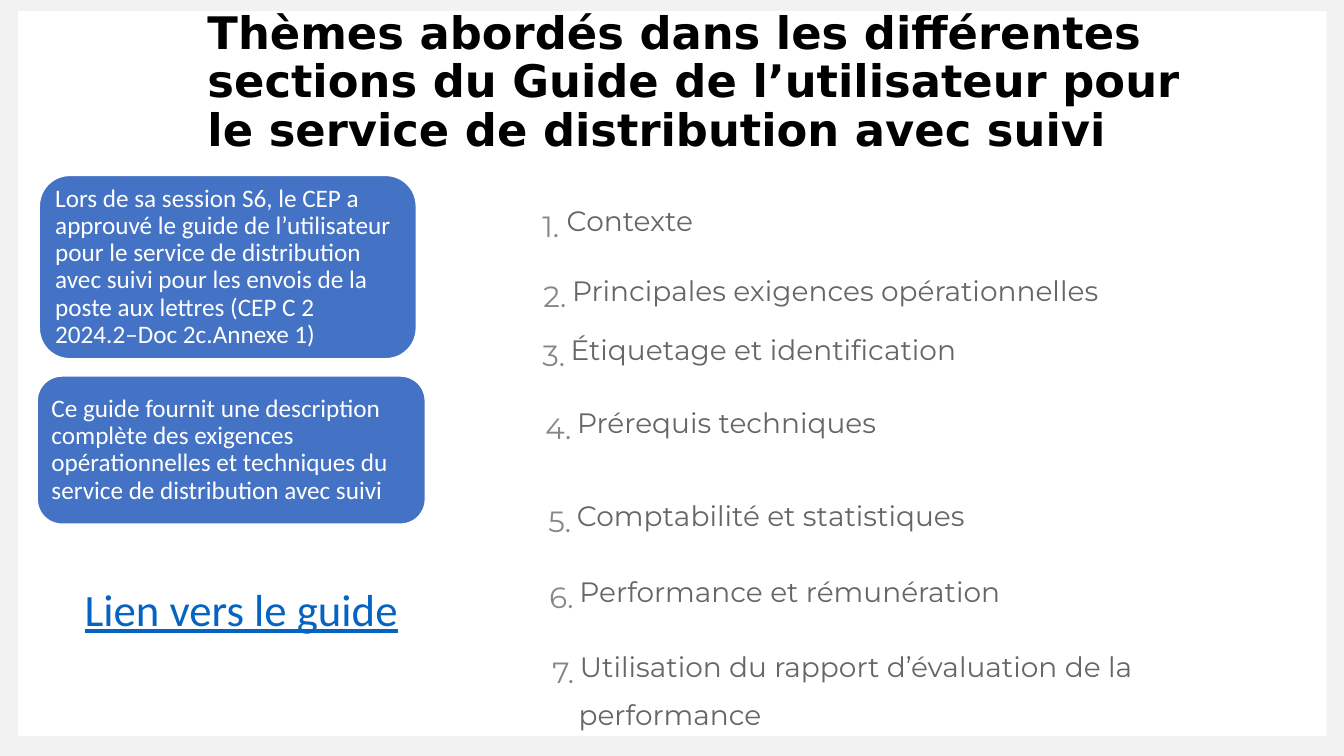
from dataclasses import dataclass

from pptx import Presentation
from pptx.dml.color import RGBColor as Color
from pptx.enum.shapes import MSO_SHAPE as Shape
from pptx.enum.text import MSO_ANCHOR as Anchor, MSO_AUTO_SIZE as AutoSize, PP_ALIGN as Align
from pptx.util import Pt


@dataclass(frozen=True)
class Theme:
    frame: str = "F2F2F2"
    white: str = "FFFFFF"
    black: str = "000000"
    card: str = "4472C4"
    link: str = "0563C1"
    number: str = "878787"
    topic: str = "666666"
    title_font: str = "DejaVu Sans"
    body_font: str = "Calibri"
    list_font: str = "Montserrat"
    title_size: int = 32
    link_size: int = 32
    card_size: int = 18
    number_size: int = 36
    gap_size: int = 27
    topic_size: int = 20


class SlideBuilder:
    def __init__(self, slide, theme):
        self.slide = slide
        self.theme = theme

    def run(self, paragraph, text, font, size, color, bold=False, underline=False, baseline=0):
        run = paragraph.add_run()
        run.text = text
        run.font.name = font
        run.font.size = Pt(size)
        run.font.bold = bold
        run.font.underline = underline
        run.font.color.rgb = Color.from_string(color)
        if baseline:
            run.font._element.set("baseline", str(baseline * 1000))

    def box(self, kind, bounds, fill, line=None):
        shape = self.slide.shapes.add_shape(kind, *map(Pt, bounds))
        shape.shadow.inherit = False
        shape.fill.solid()
        shape.fill.fore_color.rgb = Color.from_string(fill)
        if line:
            shape.line.color.rgb = Color.from_string(line)
            shape.line.width = Pt(1)
        else:
            shape.line.fill.background()
        return shape

    def frame(self, shape, insets, anchor=Anchor.TOP):
        frame = shape.text_frame
        frame.word_wrap = True
        frame.vertical_anchor = anchor
        (frame.margin_left, frame.margin_top,
         frame.margin_right, frame.margin_bottom) = map(Pt, insets)
        return frame

    def text_box(self, bounds, insets=(7.2, 3.6, 7.2, 3.6), anchor=Anchor.TOP):
        shape = self.slide.shapes.add_textbox(*map(Pt, bounds))
        return self.frame(shape, insets, anchor)

    def title(self, bounds, lines):
        theme = self.theme
        paragraph = self.text_box(bounds, anchor=Anchor.MIDDLE).paragraphs[0]
        paragraph.line_spacing = 0.9
        for index, line in enumerate(lines):
            if index:
                paragraph.add_line_break()
            self.run(paragraph, line, theme.title_font, theme.title_size, theme.black, bold=True)

    def card(self, bounds, text):
        theme = self.theme
        shape = self.box(Shape.ROUNDED_RECTANGLE, bounds, theme.card, theme.white)
        paragraph = self.frame(shape, (5, 5, 5, 5), Anchor.MIDDLE).paragraphs[0]
        paragraph.alignment = Align.LEFT
        paragraph.line_spacing = 0.9
        self.run(paragraph, text, theme.body_font, theme.card_size, theme.white)

    def topic(self, number, text, bounds, margin, hanging):
        theme = self.theme
        frame = self.text_box(bounds, (0, 2 if hanging else 1, 0, 0))
        frame.auto_size = AutoSize.SHAPE_TO_FIT_TEXT
        paragraph = frame.paragraphs[0]
        properties = paragraph._p.get_or_add_pPr()
        properties.set("marL", str(Pt(margin)))
        properties.set("indent", str(-Pt(hanging)))
        if hanging:
            paragraph.line_spacing = 1.25
        gap_size = theme.number_size if number == 1 else theme.gap_size
        for part, size in ((f"{number}.", theme.number_size), (" ", gap_size)):
            self.run(paragraph, part, theme.list_font, size, theme.number, baseline=-12)
        self.run(paragraph, text, theme.list_font, theme.topic_size, theme.topic)

    def link_label(self, bounds, text):
        theme = self.theme
        frame = self.text_box(bounds)
        frame.auto_size = AutoSize.SHAPE_TO_FIT_TEXT
        paragraph = frame.paragraphs[0]
        paragraph.alignment = Align.CENTER
        self.run(paragraph, text, theme.body_font, theme.link_size, theme.link, underline=True)


CARDS = [
    ((28.1, 125.3, 269.3, 131),
     "Lors de sa session S6, le CEP a approuvé le guide de l’utilisateur pour le service de "
     "distribution avec suivi pour les envois de la poste aux lettres "
     "(CEP C 2 2024.2–Doc 2c.Annexe 1)"),
    ((26.6, 268.6, 277.2, 105.8),
     "Ce guide fournit une description complète des exigences opérationnelles et techniques "
     "du service de distribution avec suivi"),
]

# Text, bounds, left margin, hanging indent
TOPICS = [
    ("Contexte", (384.5, 115.9, 172.8, 35.3), 18.7, 15.8),
    ("Principales exigences opérationnelles", (385.2, 166.3, 474.5, 35.3), 22.3, 19.4),
    ("Étiquetage et identification", (384.5, 220.3, 443.5, 30.2), 2.9, 0),
    ("Prérequis techniques", (386.6, 272.9, 337.7, 30.2), 2.9, 0),
    ("Comptabilité et statistiques", (388.1, 326.9, 343.4, 35.3), 24.5, 20.9),
    ("Performance et rémunération", (388.8, 380.9, 401, 35.3), 24.5, 20.9),
    ("Utilisation du rapport d’évaluation de la performance",
     (391.7, 434.9, 422.6, 66.2), 21.6, 18.7),
]


def main():
    presentation = Presentation()
    presentation.slide_width, presentation.slide_height = Pt(960), Pt(540)
    theme = Theme()
    slide = presentation.slides.add_slide(presentation.slide_layouts[6])
    builder = SlideBuilder(slide, theme)

    # Grey frame around a white page
    builder.box(Shape.RECTANGLE, (0, 0, 960, 540), theme.frame)
    builder.box(Shape.RECTANGLE, (13, 7.9, 934.6, 517.7), theme.white)

    # Heading
    builder.title((141.1, 36.7, 778.3, 45.4), [
        "Thèmes abordés dans les différentes sections du Guide de l’utilisateur pour ",
        "le service de distribution avec suivi",
    ])

    # Background cards on the left
    for bounds, text in CARDS:
        builder.card(bounds, text)

    # Numbered topics on the right
    for number, (text, bounds, margin, hanging) in enumerate(TOPICS, 1):
        builder.topic(number, text, bounds, margin, hanging)

    # Link label
    builder.link_label((33.8, 411.8, 277.2, 46.1), "Lien vers le guide")

    presentation.save("out.pptx")


if __name__ == "__main__":
    main()
